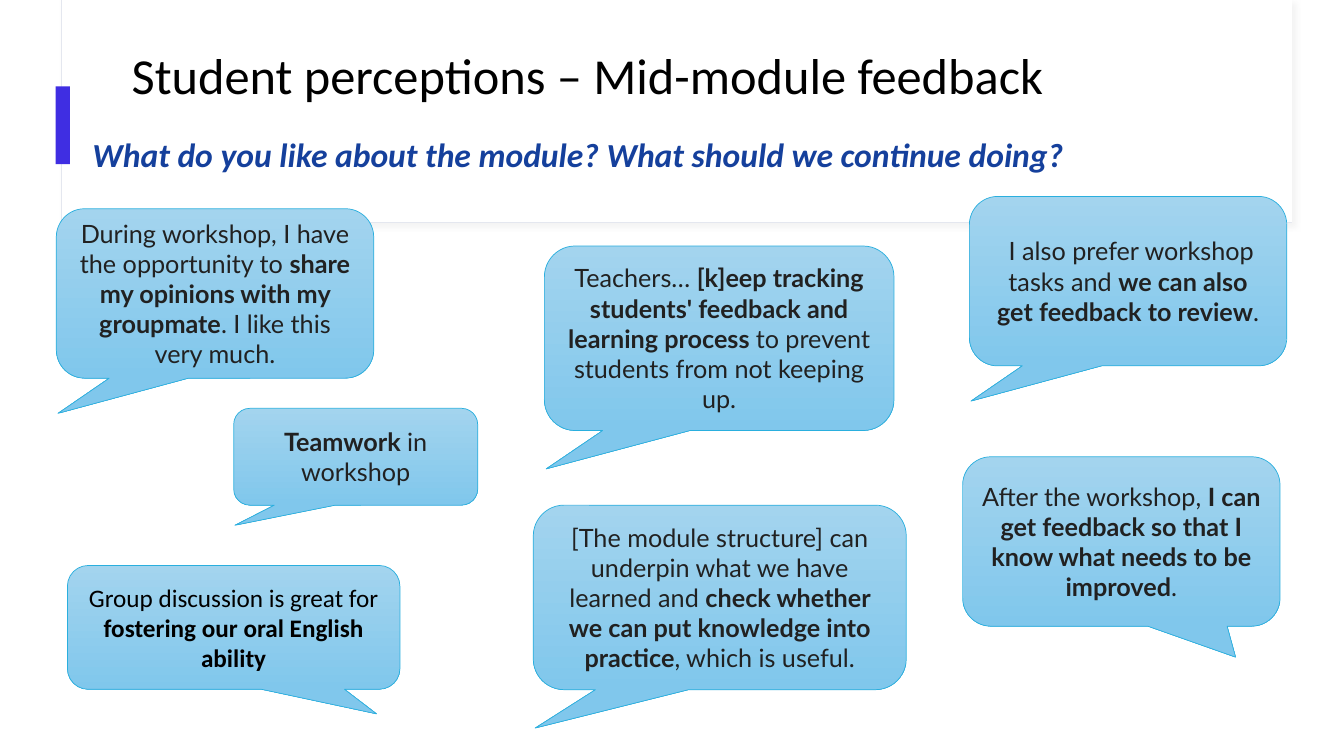
"""Build the slide of mid-module student feedback in speech callouts."""
from dataclasses import dataclass
from typing import Any

from lxml import etree
from pptx import Presentation
from pptx import util as u
from pptx.dml.color import RGBColor
from pptx.enum import shapes, text
from pptx.oxml.ns import qn


@dataclass(frozen=True)
class Theme:
    white: str = "FFFFFF"
    black: str = "000000"
    ink: str = "212121"
    question: str = "15409C"
    accent: str = "3F2EE2"
    panel_line: str = "E4E7EF"
    shadow: str = "D9D9D9"
    callout_top: str = "A3D4EE"
    callout_bottom: str = "80C7EC"
    callout_line: str = "2AAFDE"
    heading_font: str = "Calibri"
    quote_font: str = "Lato"
    title_size: int = 36
    question_size: int = 24
    quote_size: int = 18


THEME = Theme()


@dataclass(frozen=True)
class Box:
    left: float
    top: float
    width: float
    height: float

    def lengths(self) -> tuple[u.Cm, ...]:
        return tuple(u.Cm(v) for v in (self.left, self.top, self.width, self.height))


@dataclass(frozen=True)
class Run:
    words: str
    bold: bool = False
    italic: bool = False


@dataclass(frozen=True)
class Panel:
    box: Box
    fill: str
    line: str | None = None
    shadow: str | None = None


@dataclass(frozen=True)
class Label:
    box: Box
    run: Run
    size: int
    color: str
    anchor: Any
    spacing: float = 1.0


@dataclass(frozen=True)
class Callout:
    box: Box
    runs: tuple[Run, ...]
    tail: tuple[float, float] = (-0.495, 0.708)
    font: str = THEME.quote_font
    color: str = THEME.ink


PANELS = (
    Panel(Box(1.55, 0, 31.01, 5.61), THEME.white, THEME.panel_line, THEME.shadow),
    Panel(Box(1.57, 0, 30.99, 5.59), THEME.white),
    Panel(Box(1.4, 2.18, 0.36, 1.96), THEME.accent),
)
LABELS = (
    Label(Box(3.07, 0.33, 28.24, 3.28), Run("Student perceptions – Mid-module feedback"),
          THEME.title_size, THEME.black, text.MSO_ANCHOR.MIDDLE, 0.9),
    Label(Box(2.08, 3.25, 29.74, 1.27),
          Run("What do you like about the module? What should we continue doing?", True, True),
          THEME.question_size, THEME.question, text.MSO_ANCHOR.TOP),
)
CALLOUTS = (
    Callout(Box(1.42, 5.26, 8, 4.27), (
        Run("During workshop, I have the opportunity to "),
        Run("share my opinions with my groupmate", True),
        Run(". I like this very much."))),
    Callout(Box(24.26, 11.51, 8, 4.27), (
        Run("After the workshop, "),
        Run("I can get feedback so that I know what needs to be improved", True),
        Run(".")), (0.36, 0.683)),
    Callout(Box(24.43, 4.95, 8, 4.27), (
        Run(" I also prefer workshop tasks and "),
        Run("we can also get feedback to review", True),
        Run("."))),
    Callout(Box(13.72, 6.2, 8.81, 4.65), (
        Run("Teachers… "),
        Run("[k]eep tracking students' feedback and learning process ", True),
        Run("to prevent students from not keeping up."))),
    Callout(Box(5.89, 10.29, 6.15, 2.44), (Run("Teamwork", True), Run(" in workshop"))),
    Callout(Box(1.7, 14.25, 8.38, 3.12), (
        Run("Group discussion is great for "),
        Run("fostering our oral English ability", True)),
        (0.43, 0.699), THEME.heading_font, THEME.black),
    Callout(Box(13.44, 12.73, 9.4, 4.65), (
        Run("[The module structure] can underpin what we have learned and "),
        Run("check whether we can put knowledge into practice", True),
        Run(", which is useful."))),
)


def set_all(target: Any, values: dict[str, Any]) -> None:
    for name, value in values.items():
        setattr(target, name, value)


def add_runs(p: Any, runs: tuple[Run, ...], font: str, size: int, color: str) -> None:
    for run in runs:
        r = p.add_run()
        r.text = run.words
        set_all(r.font, {"name": font, "size": u.Pt(size), "bold": run.bold,
                         "italic": run.italic})
        r.font.color.rgb = RGBColor.from_string(color)


def add_shadow(sp: Any, color: str) -> None:
    effects = sp._element.spPr.find(qn("a:effectLst"))
    outer = etree.SubElement(effects, qn("a:outerShdw"), blurRad=str(u.Pt(4)),
                             dist=str(u.Pt(3)), dir="2700000")
    tint = etree.SubElement(outer, qn("a:srgbClr"), val=color)
    etree.SubElement(tint, qn("a:alpha"), val="30000")


def draw_panel(s: Any, panel: Panel) -> None:
    sp = s.shapes.add_shape(shapes.MSO_SHAPE.RECTANGLE, *panel.box.lengths())
    sp.shadow.inherit = False
    sp.fill.solid()
    sp.fill.fore_color.rgb = RGBColor.from_string(panel.fill)
    if panel.line:
        sp.line.color.rgb = RGBColor.from_string(panel.line)
        sp.line.width = u.Pt(0.75)
    else:
        sp.line.fill.background()
    if panel.shadow:
        add_shadow(sp, panel.shadow)


def draw_label(s: Any, label: Label) -> None:
    tf = s.shapes.add_textbox(*label.box.lengths()).text_frame
    set_all(tf, {"word_wrap": True, "vertical_anchor": label.anchor})
    p = tf.paragraphs[0]
    p.line_spacing = label.spacing
    add_runs(p, (label.run,), THEME.heading_font, label.size, label.color)


def draw_callout(s: Any, callout: Callout) -> None:
    sp = s.shapes.add_shape(shapes.MSO_SHAPE.ROUNDED_RECTANGULAR_CALLOUT,
                            *callout.box.lengths())
    sp.shadow.inherit = False
    for i, value in enumerate((*callout.tail, 0.167)):
        sp.adjustments[i] = value
    sp.fill.gradient()
    sp.fill.gradient_angle = 270
    for stop, color in zip(sp.fill.gradient_stops, (THEME.callout_top, THEME.callout_bottom)):
        stop.color.rgb = RGBColor.from_string(color)
    sp.line.color.rgb = RGBColor.from_string(THEME.callout_line)
    sp.line.width = u.Pt(0.5)
    tf = sp.text_frame
    set_all(tf, {"word_wrap": True, "vertical_anchor": text.MSO_ANCHOR.MIDDLE})
    p = tf.paragraphs[0]
    p.alignment = text.PP_ALIGN.CENTER
    add_runs(p, callout.runs, callout.font, THEME.quote_size, callout.color)


def main() -> None:
    prs = Presentation()
    set_all(prs, {"slide_width": u.Cm(33.87), "slide_height": u.Cm(19.05)})
    s = prs.slides.add_slide(prs.slide_layouts[6])
    for draw, items in ((draw_panel, PANELS), (draw_label, LABELS), (draw_callout, CALLOUTS)):
        for item in items:
            draw(s, item)
    prs.save("out.pptx")


if __name__ == "__main__":
    main()
